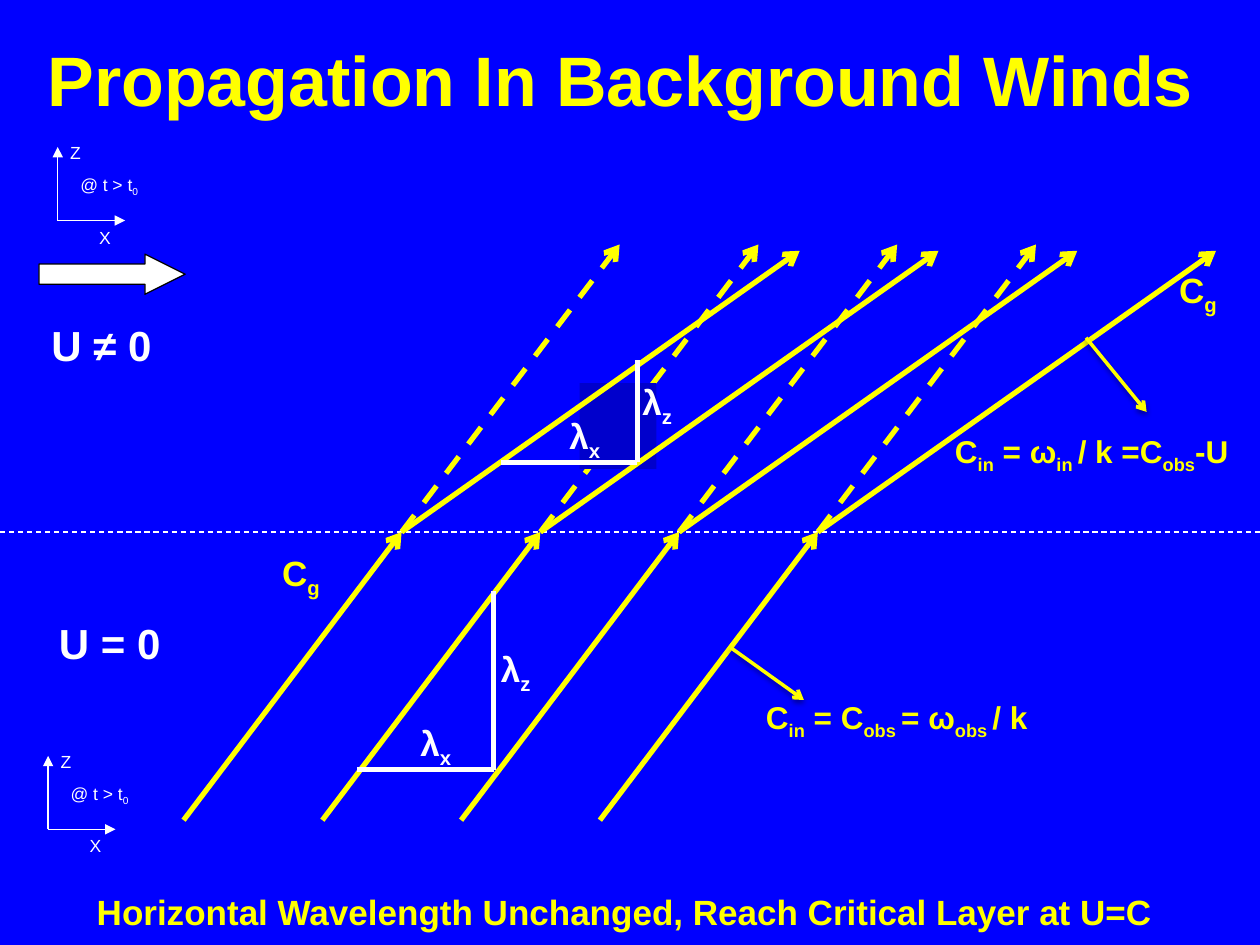
import pptx
import pptx.util
import pptx.dml.color
import pptx.enum.dml
import pptx.enum.shapes
import pptx.enum.text
import pptx.oxml
import pptx.oxml.ns

Pt = pptx.util.Pt
RGB = pptx.dml.color.RGBColor
SHAPE = pptx.enum.shapes.MSO_SHAPE
ALIGN = pptx.enum.text.PP_ALIGN
ANCHOR = pptx.enum.text.MSO_ANCHOR

BLUE = RGB(0x00, 0x00, 0xFF)
NAVY = RGB(0x00, 0x00, 0xCC)
YELLOW = RGB(0xFF, 0xFF, 0x00)
WHITE = RGB(0xFF, 0xFF, 0xFF)
BLACK = RGB(0x00, 0x00, 0x00)

# Content: text between bars is subscript
TITLE = "Propagation In Background Winds"
FOOTER = "Horizontal Wavelength Unchanged, Reach Critical Layer at U=C"
LABELS = [  # text, left, top, width, height, size, colour
    ("U ≠ 0", 22.3, 179.3, 83.5, 36, 24, WHITE),
    ("U = 0", 26.6, 349.2, 83.5, 36, 24, WHITE),
    ("C|in| = C|obs |= ω|obs |/ k", 430.6, 395.3, 193.7, 28.8, 18, YELLOW),
    ("C|in| = ω|in |/ k =C|obs|-U", 538.6, 243.4, 181.4, 28.8, 18, YELLOW),
    ("C|g", 154.1, 311.8, 43.9, 31, 20, YELLOW),
    ("C|g", 666.7, 149.8, 43.9, 31, 20, YELLOW),
]
AXES = [(33, 126), (27.5, 473.9)]  # origins
WEDGES = [  # right-angle corner, rise, x label offset, z label offset
    ((282.2, 439.9), 102.2, (-49, -31), (-3, -73.4)),
    ((364.3, 264.2), 58.3, (-46, -31), (-4.3, -50.4)),
]
NORMALS = [((417.6, 370.1), (459.4, 400)), ((620.6, 193), (655.2, 235.4))]

# Four rays that bend at the wind boundary
EDGE = 304
FIRST, STEP, COUNT = 229.5, 79.3, 4
TAIL = (-124.6, 468.7)
STRAIGHT = (124.6, 139.7)
BENT = (227.5, 143.3)
WAVE = 78

SHADOW = ('<a:outerShdw {} blurRad="39370" dist="20320" dir="5400000" rotWithShape="0">'
          '<a:srgbClr val="000000"><a:alpha val="38000"/></a:srgbClr></a:outerShdw>')

deck = pptx.Presentation()
deck.slide_width, deck.slide_height = Pt(720), Pt(540)
slide = deck.slides.add_slide(deck.slide_layouts[6])
slide.background.fill.solid()
slide.background.fill.fore_color.rgb = BLUE


def line(start, end, colour, width, tip=None, dash=False, shade=False):
    item = slide.shapes.add_connector(
        pptx.enum.shapes.MSO_CONNECTOR.STRAIGHT, *map(Pt, (*start, *end)))
    item.line.color.rgb = colour
    item.line.width = Pt(width)
    if dash:
        item.line.dash_style = pptx.enum.dml.MSO_LINE.DASH
    if tip:
        head = pptx.oxml.parse_xml(
            f'<a:tailEnd {pptx.oxml.ns.nsdecls("a")} type="{tip}"/>')
        item.line._get_or_add_ln().append(head)
    names = pptx.oxml.ns.nsdecls("a")
    inner = SHADOW.format(names) if shade else ""
    item._element.spPr.append(
        pptx.oxml.parse_xml(f"<a:effectLst {names}>{inner}</a:effectLst>"))


def text(words, left, top, width, height, size, colour, bold=True,
         align=ALIGN.LEFT, anchor=ANCHOR.TOP):
    box = slide.shapes.add_textbox(*map(Pt, (left, top, width, height)))
    frame = box.text_frame
    frame.word_wrap = True
    frame.vertical_anchor = anchor
    para = frame.paragraphs[0]
    para.alignment = align
    font = para.font
    font.name, font.size, font.bold = "Arial", Pt(size), bold
    font.color.rgb = colour
    for i, part in enumerate(words.split("|")):
        run = para.add_run()
        run.text = part
        if i % 2:
            run._r.get_or_add_rPr().set("baseline", "-25000")


def shape(kind, left, top, width, height, fill):
    item = slide.shapes.add_shape(kind, *map(Pt, (left, top, width, height)))
    item.shadow.inherit = False
    item.fill.solid()
    item.fill.fore_color.rgb = fill
    item.line.fill.background()
    return item


# Rays, with the dashed ones behind the dark patch
bends = [FIRST + i * STEP for i in range(COUNT)]
for x in bends:
    line((x, EDGE), (x + STRAIGHT[0], STRAIGHT[1]), YELLOW, 3, "arrow", dash=True)
shape(SHAPE.RECTANGLE, 331.2, 218.9, 43.9, 49, NAVY)
line((0, EDGE), (720, EDGE), WHITE, 0.75, dash=True)
for x in bends:
    line((x + TAIL[0], TAIL[1]), (x, EDGE), YELLOW, 3, "arrow")
    line((x, EDGE), (x + BENT[0], BENT[1]), YELLOW, 3, "arrow")

# Wind arrow
wind = shape(SHAPE.RIGHT_ARROW, 22.3, 145.2, 83.5, 23, WHITE)
wind.adjustments[0], wind.adjustments[1] = 0.5, 1
wind.line.color.rgb = BLACK
wind.line.width = Pt(0.75)

# Small axes
for x, y in AXES:
    line((x, y), (x, y - 42), WHITE, 0.75, "triangle")
    line((x, y), (x + 38.5, y), WHITE, 0.75, "triangle")
    for words, dx, dy, wide in [("Z", 0, -48.2, 27.4), ("X", 16.6, 0, 27.4),
                                ("@ t > t|0", 5.8, -30.2, 57)]:
        text(words, x + dx, y + dy, wide, 19.4, 10, WHITE, bold=False)

# Wavelength triangles
for (x, y), rise, *spots in WEDGES:
    line((x - WAVE, y), (x, y), WHITE, 3)
    line((x, y), (x, y - rise), WHITE, 3)
    for name, (dx, dy) in zip("xz", spots):
        text("λ|" + name, x + dx, y + dy, 44, 31, 20, WHITE)

# Phase velocity arrows
for start, end in NORMALS:
    line(start, end, YELLOW, 2, "arrow", shade=True)

# Labels, footer and title
for label in LABELS:
    text(*label)
text(FOOTER, -3, 505.4, 720, 31, 20, YELLOW, align=ALIGN.CENTER)
text(TITLE, 8.6, 0, 692, 90, 40, YELLOW, align=ALIGN.CENTER, anchor=ANCHOR.MIDDLE)

deck.save("out.pptx")
